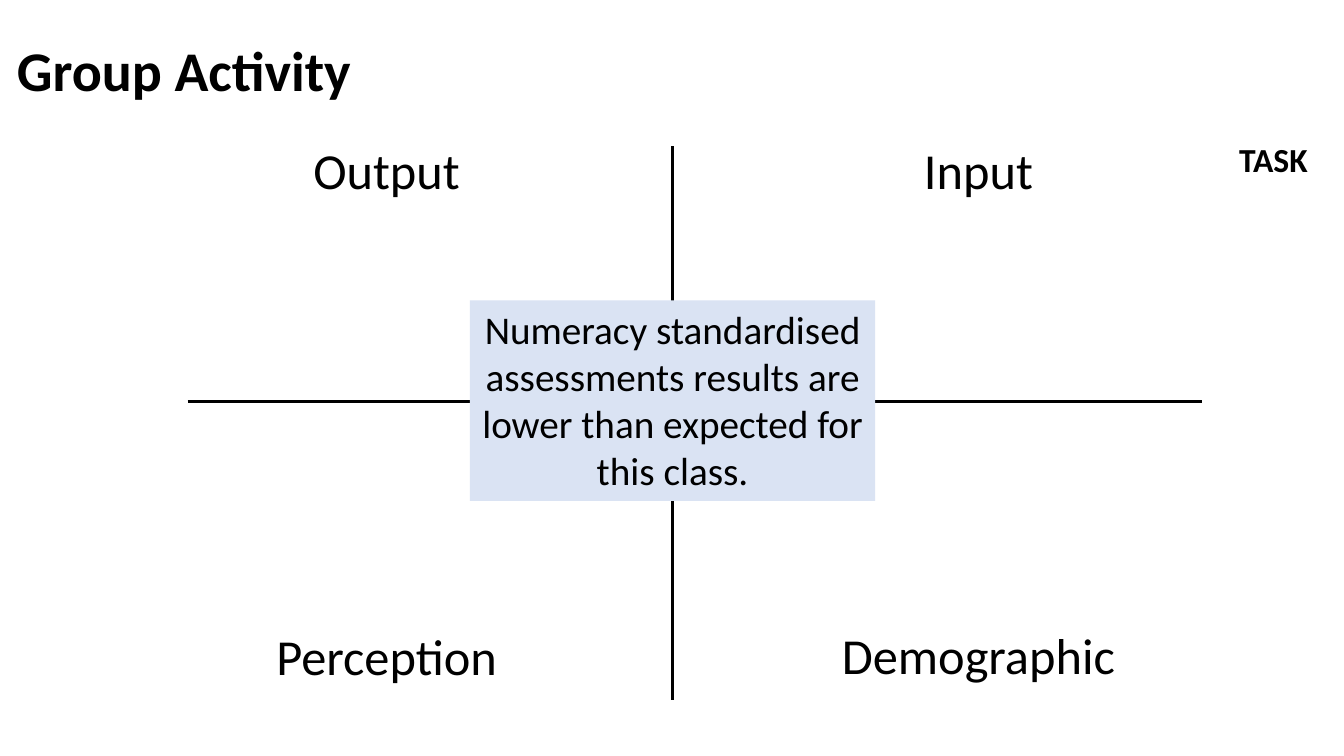
import pptx
import pptx.dml.color
import pptx.enum.shapes
import pptx.enum.text
import pptx.oxml
import pptx.util
from dataclasses import dataclass

Inches = pptx.util.Inches
Align = pptx.enum.text.PP_ALIGN
Anchor = pptx.enum.text.MSO_ANCHOR


@dataclass(frozen=True)
class Theme:
    font: str = "Calibri"
    ink: str = "000000"
    paper: str = "FFFFFF"
    panel: str = "DAE3F3"
    title: int = 40
    quadrant: int = 36
    issue: int = 28
    task: int = 24
    thin: float = 1.5
    thick: float = 2.25


class SlideBuilder:
    def __init__(self, slide, theme):
        self.slide = slide
        self.theme = theme
        background = slide.background.fill
        background.solid()
        background.fore_color.rgb = self.color(theme.paper)

    def color(self, value):
        return pptx.dml.color.RGBColor.from_string(value)

    def set_text(self, shape, wording, size, bold=False, align=Align.CENTER, anchor=Anchor.TOP):
        frame = shape.text_frame
        frame.word_wrap = True
        frame.vertical_anchor = anchor
        frame.text = wording
        paragraph = frame.paragraphs[0]
        paragraph.alignment = align
        font = paragraph.runs[0].font
        font.name = self.theme.font
        font.size = pptx.util.Pt(size)
        font.bold = bold
        font.color.rgb = self.color(self.theme.ink)
        return paragraph

    def label(self, wording, left, top, width, height, size, **style):
        box = self.slide.shapes.add_textbox(
            Inches(left), Inches(top), Inches(width), Inches(height))
        return self.set_text(box, wording, size, **style)

    def panel(self, wording, left, top, width, height, size):
        box = self.slide.shapes.add_shape(
            pptx.enum.shapes.MSO_SHAPE.RECTANGLE,
            Inches(left), Inches(top), Inches(width), Inches(height))
        box.shadow.inherit = False
        box.fill.solid()
        box.fill.fore_color.rgb = self.color(self.theme.panel)
        box.line.fill.background()
        self.set_text(box, wording, size)

    def axis(self, x1, y1, x2, y2, weight):
        line = self.slide.shapes.add_connector(
            pptx.enum.shapes.MSO_CONNECTOR.STRAIGHT,
            Inches(x1), Inches(y1), Inches(x2), Inches(y2))
        line.line.color.rgb = self.color(self.theme.ink)
        line.line.width = pptx.util.Pt(weight)
        properties = line._element.spPr
        properties.append(pptx.oxml.parse_xml(
            '<a:effectLst xmlns:a="http://schemas.openxmlformats.org/drawingml/2006/main"/>'))


def main():
    deck = pptx.Presentation()
    deck.slide_width = Inches(13.33)
    deck.slide_height = Inches(7.5)
    theme = Theme()
    builder = SlideBuilder(deck.slides.add_slide(deck.slide_layouts[6]), theme)

    # Heading and task tag
    heading = builder.label("Group Activity", 0.07, 0, 11.5, 1.45, theme.title,
                            bold=True, align=Align.LEFT, anchor=Anchor.MIDDLE)
    heading.line_spacing = 0.9
    builder.label("TASK", 12.15, 1.33, 0.96, 0.5, theme.task, bold=True)

    # Axes of the quadrant
    builder.axis(6.67, 1.45, 6.67, 6.94, theme.thin)
    builder.axis(1.86, 3.98, 11.92, 3.98, theme.thick)

    # Quadrant names
    left_column, right_column = 2.28, 8.15
    for name, left, top in (
        ("Output", left_column, 1.33),
        ("Input", right_column, 1.33),
        ("Perception", left_column, 6.15),
        ("Demographic", right_column, 6.14),
    ):
        builder.label(name, left, top, 3.11, 0.71, theme.quadrant)

    # Issue at the centre
    builder.panel("Numeracy standardised assessments results are lower than "
                  "expected for this class.", 4.66, 2.98, 4.02, 1.99, theme.issue)

    deck.save("out.pptx")


if __name__ == "__main__":
    main()
